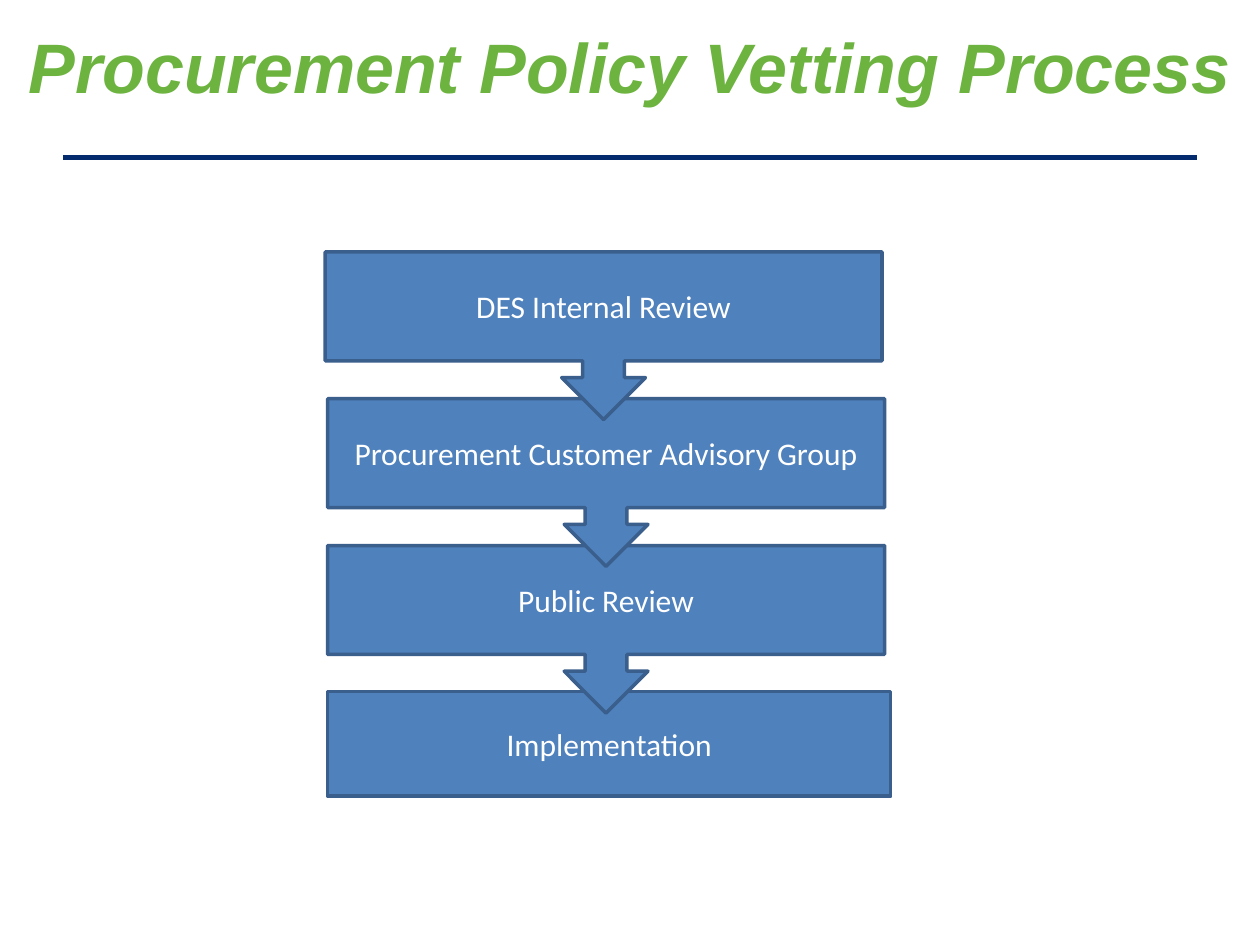
from dataclasses import dataclass

from pptx import Presentation
from pptx.dml.color import RGBColor
from pptx.enum import shapes, text
from pptx.oxml import ns, xmlchemy
from pptx.util import Inches, Pt


@dataclass(frozen=True)
class Theme:
    """Colours, fonts and type sizes of the slide."""
    title: RGBColor = RGBColor.from_string("6DB33F")
    rule: RGBColor = RGBColor.from_string("032B6D")
    step: RGBColor = RGBColor.from_string("4F81BD")
    step_edge: RGBColor = RGBColor.from_string("3A5F8C")
    step_text: RGBColor = RGBColor.from_string("FFFFFF")
    title_font: str = "Arial"
    step_font: str = "Calibri"
    title_size: int = 40
    step_size: int = 18


THEME = Theme()


def style_text(paragraph, words, font, size, colour):
    """Fill a centred paragraph and set its font."""
    paragraph.text = words
    paragraph.alignment = text.PP_ALIGN.CENTER
    paragraph.font.name = font
    paragraph.font.size = Pt(size)
    paragraph.font.color.rgb = colour


def add_heading(slide, left, top, width, height, words):
    """Place the title in its box, with a rule below it."""
    rule_inset, rule_drop = 0.5, 1.17
    rule_y = Inches(top + rule_drop)
    rule = slide.shapes.add_connector(
        shapes.MSO_CONNECTOR.STRAIGHT,
        Inches(left + rule_inset), rule_y,
        Inches(left + width - rule_inset), rule_y)
    rule.line.color.rgb = THEME.rule
    rule.line.width = Pt(3)
    rule._element.spPr.append(xmlchemy.OxmlElement("a:effectLst"))

    title = slide.shapes.add_textbox(
        Inches(left), Inches(top), Inches(width), Inches(height))
    frame = title.text_frame
    frame.word_wrap = True
    frame.margin_top = Inches(0.11)
    heading = frame.paragraphs[0]
    style_text(heading, words, THEME.title_font, THEME.title_size, THEME.title)
    heading.font.bold = True
    heading.font.italic = True


def add_step(slide, preset, left, top, width, height, words):
    """Place one step of the process."""
    step = slide.shapes.add_shape(
        preset, Inches(left), Inches(top), Inches(width), Inches(height))
    step.shadow.inherit = False
    step.fill.solid()
    step.fill.fore_color.rgb = THEME.step
    step.line.color.rgb = THEME.step_edge
    step.line.width = Pt(2)
    frame = step.text_frame
    frame.word_wrap = True
    frame.vertical_anchor = text.MSO_ANCHOR.MIDDLE
    style_text(frame.paragraphs[0], words,
               THEME.step_font, THEME.step_size, THEME.step_text)


def add_process(slide, left, top, width, height, steps):
    """Stack the steps from the bottom up so each arrow overlaps the next."""
    pitch, callout_height, last_height = 1.165, 1.33, 0.83
    callout_width, first_shift = width - 0.05, 0.02
    *callouts, last = steps
    add_step(slide, shapes.MSO_SHAPE.RECTANGLE, left,
             top + height - last_height, width, last_height, last)
    for row, words in reversed(list(enumerate(callouts))):
        step_left = left if row else left - first_shift
        add_step(slide, shapes.MSO_SHAPE.DOWN_ARROW_CALLOUT, step_left,
                 top + row * pitch, callout_width, callout_height, words)


def main():
    """Build and save the slide."""
    deck = Presentation()
    deck.slide_width, deck.slide_height = Inches(10), Inches(7.5)
    slide = deck.slides.add_slide(deck.slide_layouts[6])
    add_heading(slide, 0, 0.08, 10, 1, "Procurement Policy Vetting Process")
    add_process(slide, 2.6, 2, 4.47, 4.32, [
        "DES Internal Review",
        "Procurement Customer Advisory Group",
        "Public Review",
        "Implementation",
    ])
    deck.save("out.pptx")


if __name__ == "__main__":
    main()
